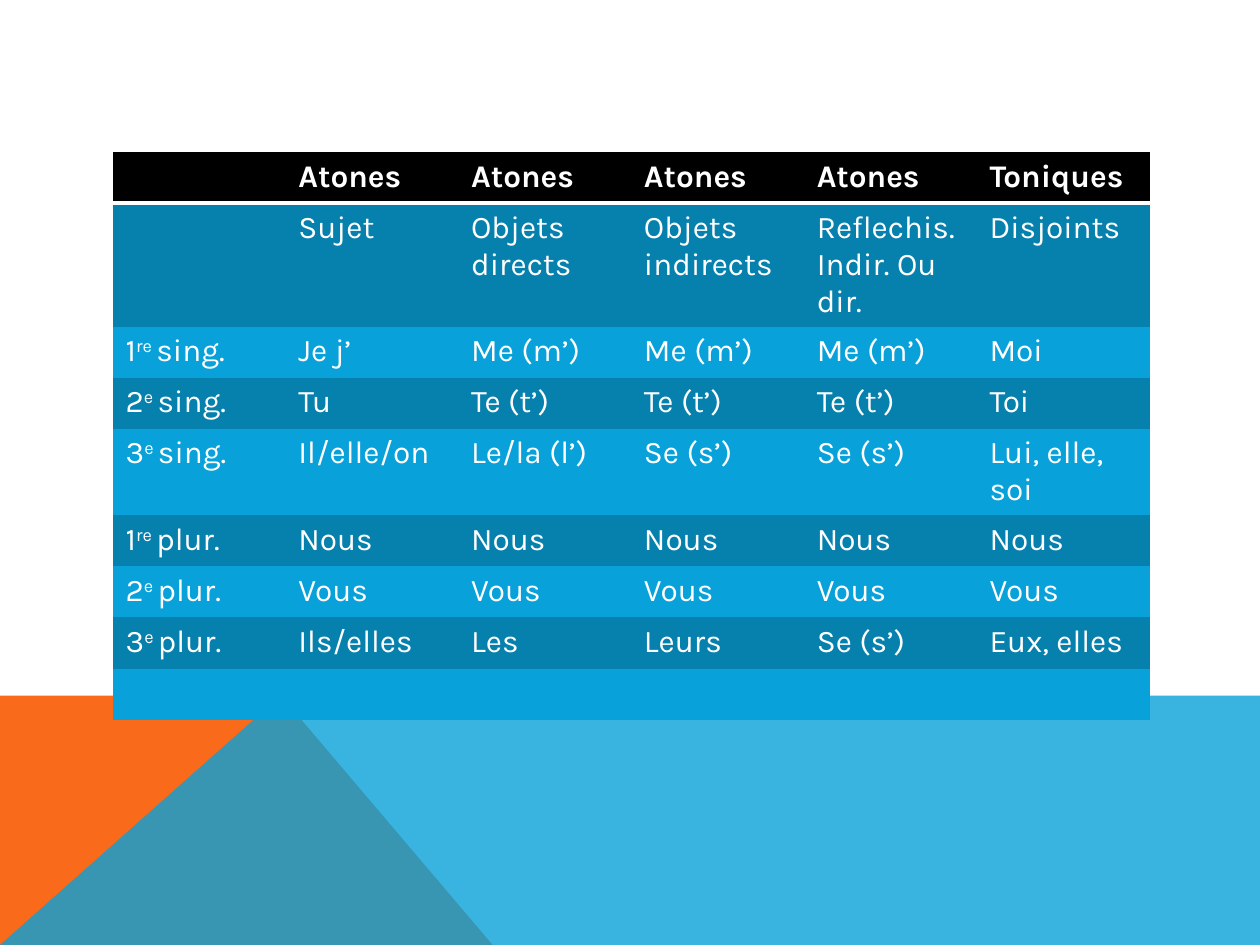
from dataclasses import dataclass

from lxml import etree
from pptx import Presentation
from pptx.dml.color import RGBColor
from pptx.oxml.ns import qn
from pptx.util import Pt

BLANK_LAYOUT = 6
PLAIN_TABLE_STYLE = "{2D5ABB26-0587-4C30-8999-92F81FD0307C}"


@dataclass(frozen=True)
class Theme:
    font: str = "Karla"
    text_size: float = 18
    text: str = "FFFFFF"
    header: str = "000000"
    bands: tuple = ("0681AE", "08A1D9")
    orange: str = "F96A1B"
    blue: str = "08A1D9"
    rule_width: float = 2


HEADINGS = ["", "Atones", "Atones", "Atones", "Atones", "Toniques"]
ROLES = ["", "Sujet", "Objets directs", "Objets indirects",
         "Reflechis. Indir. Ou dir.", "Disjoints"]
# A tuple is (number, raised ordinal ending, rest).
PRONOUNS = [
    [("1", "re ", "sing."), "Je j’", "Me (m’)", "Me (m’)", "Me (m’)", "Moi"],
    [("2", "e ", "sing."), "Tu", "Te (t’)", "Te (t’)", "Te (t’)", "Toi"],
    [("3", "e ", "sing."), "Il/elle/on", "Le/la (l’)", "Se (s’)", "Se (s’)",
     "Lui, elle, soi"],
    [("1", "re ", "plur.")] + ["Nous"] * 5,
    [("2", "e ", "plur.")] + ["Vous"] * 5,
    [("3", "e ", "plur."), "Ils/elles", "Les", "Leurs", "Se (s’)", "Eux, elles"],
]
ROWS = [HEADINGS, ROLES, *PRONOUNS, [""] * len(HEADINGS)]


class SlideBuilder:
    def __init__(self, slide, theme):
        self.slide = slide
        self.theme = theme

    def polygon(self, points, color, opacity=100):
        (left, top), *others = [(Pt(x), Pt(y)) for x, y in points]
        outline = self.slide.shapes.build_freeform(left, top)
        outline.add_line_segments(others, close=True)
        area = outline.convert_to_shape()
        area.shadow.inherit = False
        area.line.fill.background()
        area.fill.solid()
        area.fill.fore_color.rgb = RGBColor.from_string(color)
        if opacity < 100:
            rgb = area._element.spPr.find(qn("a:solidFill"))[0]
            etree.SubElement(rgb, qn("a:alpha"), val=str(opacity * 1000))

    def table(self, rows, left, top, column_width, row_height):
        columns = len(rows[0])
        frame = self.slide.shapes.add_table(
            len(rows), columns, Pt(left), Pt(top),
            Pt(column_width * columns), Pt(row_height * len(rows)))
        table = frame.table
        table._tbl.tblPr.find(qn("a:tableStyleId")).text = PLAIN_TABLE_STYLE
        for column in table.columns:
            column.width = Pt(column_width)
        for row_index, row in enumerate(rows):
            table.rows[row_index].height = Pt(row_height)
            is_header = row_index == 0
            color = (self.theme.header if is_header
                     else self.theme.bands[(row_index - 1) % 2])
            for column_index, content in enumerate(row):
                cell = table.cell(row_index, column_index)
                self.fill_cell(cell, content, color, is_header)
                if is_header:
                    self.bottom_rule(cell)

    def fill_cell(self, cell, content, color, bold):
        cell.fill.solid()
        cell.fill.fore_color.rgb = RGBColor.from_string(color)
        paragraph = cell.text_frame.paragraphs[0]
        font = paragraph.font
        font.name = self.theme.font
        font.size = Pt(self.theme.text_size)
        font.bold = bold
        font.color.rgb = RGBColor.from_string(self.theme.text)
        if isinstance(content, tuple):
            number, ending, rest = [self.add_run(paragraph, part)
                                    for part in content]
            ending.font._element.set("baseline", "30000")
        elif content:
            self.add_run(paragraph, content)

    def add_run(self, paragraph, text):
        run = paragraph.add_run()
        run.text = text
        return run

    def bottom_rule(self, cell):
        rule = etree.Element(qn("a:lnB"), w=str(Pt(self.theme.rule_width)))
        fill = etree.SubElement(rule, qn("a:solidFill"))
        etree.SubElement(fill, qn("a:srgbClr"), val=self.theme.text)
        cell._tc.get_or_add_tcPr().insert(0, rule)


def main():
    width, height = 720, 540
    horizon, peak = 397.5, 160.5
    theme = Theme()
    presentation = Presentation()
    presentation.slide_width = Pt(width)
    presentation.slide_height = Pt(height)
    layout = presentation.slide_layouts[BLANK_LAYOUT]
    builder = SlideBuilder(presentation.slides.add_slide(layout), theme)

    builder.polygon([(0, height), (0, horizon), (peak, horizon),
                     (281.5, height)], theme.orange)
    builder.polygon([(0, height), (peak, horizon), (width, horizon),
                     (width, height)], theme.blue, opacity=80)
    builder.table(ROWS, left=64.6, top=86.8, column_width=98.75, row_height=29.2)
    presentation.save("out.pptx")


if __name__ == "__main__":
    main()
